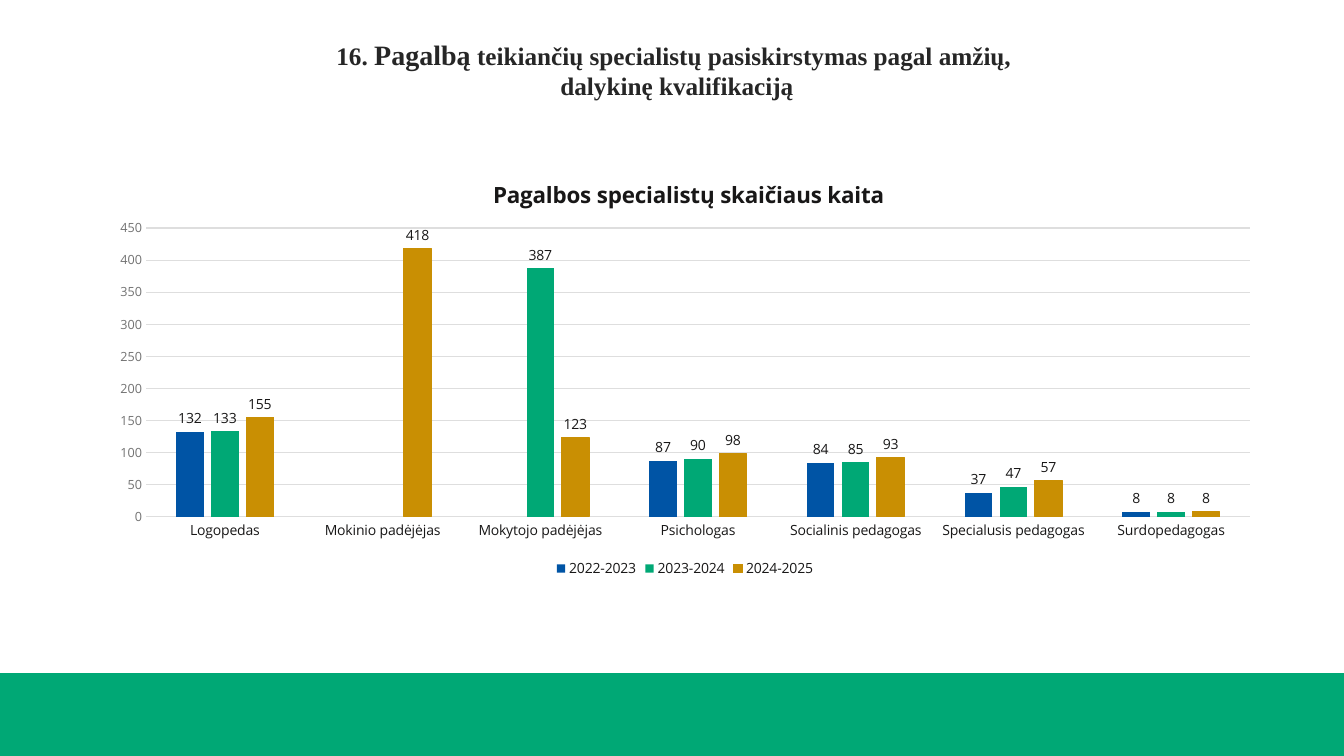
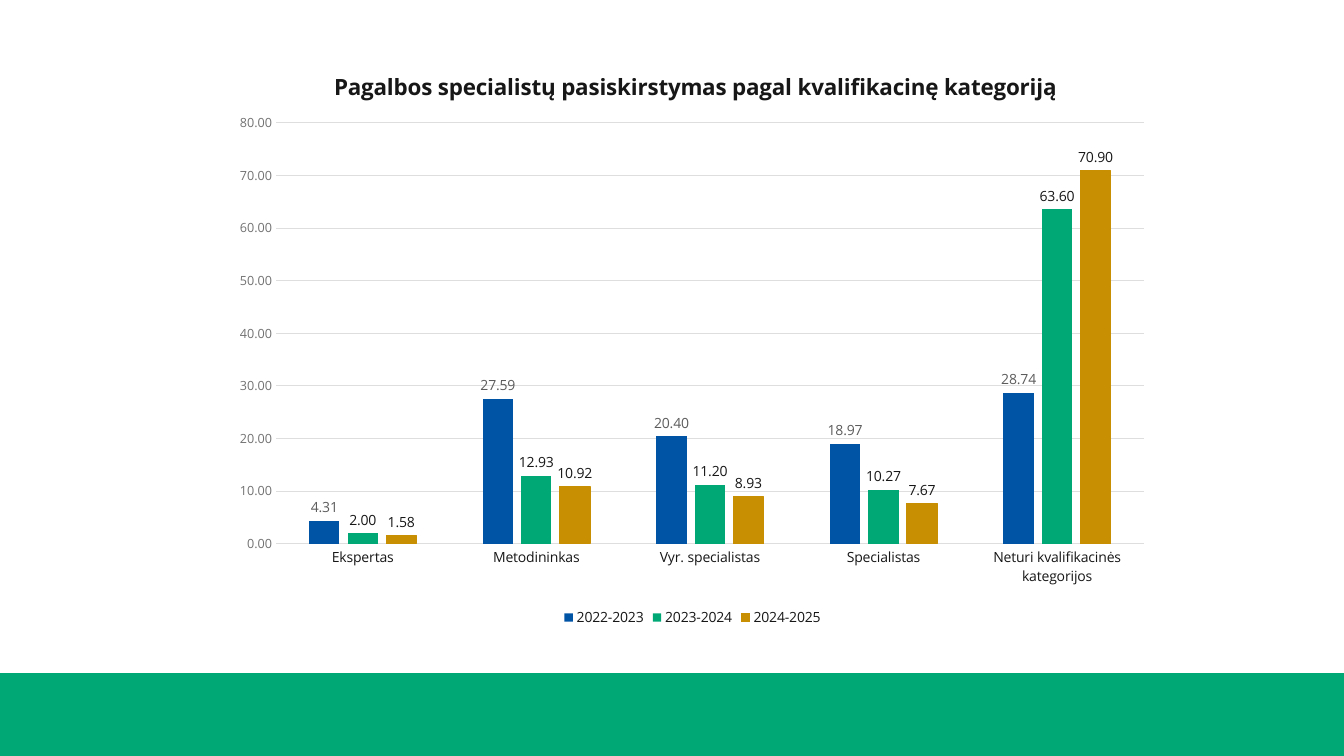
from lxml import etree
from pptx import Presentation
from pptx import util as u
from pptx.chart.data import CategoryChartData
from pptx.dml.color import RGBColor
from pptx.enum import chart as charts, shapes, text
from pptx.oxml.ns import qn

SCALE = 914400 / 100.8
SLIDE_WIDTH, SLIDE_HEIGHT = 1344, 756
BAND_HEIGHT = 83

BLUE = RGBColor(0x00, 0x54, 0xA5)
GREEN = RGBColor(0x00, 0xA8, 0x75)
OCHRE = RGBColor(0xC9, 0x8F, 0x03)
INK = RGBColor(0x18, 0x17, 0x17)
TITLE_INK = RGBColor(0x26, 0x26, 0x26)
AXIS_GREY = RGBColor(0x72, 0x72, 0x72)
LABEL_GREY = RGBColor(0x5C, 0x5C, 0x5C)
GRID_GREY = RGBColor(0xDE, 0xDE, 0xDE)

CHART_FONT = "Open Sans"
TITLE_FONT = "Times New Roman"
YEARS = ("2022-2023", "2023-2024", "2024-2025")
YEAR_COLORS = (BLUE, GREEN, OCHRE)


def px(length):
    """Turn pixels into EMU."""
    return u.Emu(round(length * SCALE))


def place(box):
    """Turn a pixel box into EMU."""
    return [px(length) for length in box]


def style_font(font, size, color, name=CHART_FONT, bold=False):
    """Set the look of a font."""
    font.name, font.size, font.bold = name, u.Pt(size), bold
    font.color.rgb = color


def style_line(line, color):
    """Give a line the hairline width and a colour."""
    line.width = u.Pt(0.75)
    line.color.rgb = color


def set_layout(parent, index, values, inner=False):
    """Fix the place of a chart part as fractions of the chart."""
    for old in parent.findall(qn("c:layout")):
        parent.remove(old)
    layout = etree.Element(qn("c:layout"))
    manual = etree.SubElement(layout, qn("c:manualLayout"))
    if inner:
        etree.SubElement(manual, qn("c:layoutTarget")).set("val", "inner")
    for mode in ("xMode", "yMode"):
        etree.SubElement(manual, qn(f"c:{mode}")).set("val", "edge")
    for key, value in zip("xywh", values):
        etree.SubElement(manual, qn(f"c:{key}")).set("val", f"{value:.4f}")
    parent.insert(index, layout)


def add_band(slide):
    """Draw the green band along the bottom edge."""
    box = (0, SLIDE_HEIGHT - BAND_HEIGHT, SLIDE_WIDTH, BAND_HEIGHT)
    band = slide.shapes.add_shape(shapes.MSO_SHAPE.RECTANGLE, *place(box))
    band.shadow.inherit = False
    band.fill.solid()
    band.fill.fore_color.rgb = GREEN
    band.line.fill.background()


def add_title(slide, box, lines):
    """Place the slide title, given as lines of (text, size) runs."""
    title = slide.shapes.title
    title.left, title.top, title.width, title.height = place(box)
    frame = title.text_frame
    frame.word_wrap = False
    frame.auto_size = text.MSO_AUTO_SIZE.NONE
    frame.vertical_anchor = text.MSO_ANCHOR.TOP
    for number, runs in enumerate(lines):
        paragraph = frame.add_paragraph() if number else frame.paragraphs[0]
        paragraph.alignment = text.PP_ALIGN.CENTER
        for words, size in runs:
            run = paragraph.add_run()
            run.text = words
            style_font(run.font, size, TITLE_INK, TITLE_FONT, True)


def style_chart_title(chart, words):
    """Write the bold chart title."""
    chart.has_title = True
    run = chart.chart_title.text_frame.paragraphs[0].add_run()
    run.text = words
    style_font(run.font, 16, INK, bold=True)


def style_axes(chart, top, step, number_format):
    """Style both axes, the grid and the scale."""
    categories, values = chart.category_axis, chart.value_axis
    for axis, size, color in ((categories, 10, INK), (values, 9, AXIS_GREY)):
        axis.major_tick_mark = axis.minor_tick_mark = charts.XL_TICK_MARK.NONE
        style_font(axis.tick_labels.font, size, color)
    style_line(categories.format.line, GRID_GREY)
    values.format.line.fill.background()
    values.has_major_gridlines = True
    style_line(values.major_gridlines.format.line, GRID_GREY)
    values.minimum_scale, values.maximum_scale, values.major_unit = 0, top, step
    values.tick_labels.number_format = number_format
    values.tick_labels.number_format_is_linked = False


def style_series(plot, label_colors, number_format):
    """Colour the columns and label them with their values."""
    plot.gap_width, plot.overlap = 219, -27
    plot.vary_by_categories = False
    for series, color, label_color in zip(plot.series, YEAR_COLORS, label_colors):
        series.invert_if_negative = False
        series.format.fill.solid()
        series.format.fill.fore_color.rgb = color
        if color == OCHRE:
            style_line(series.format.line, color)
        labels = series.data_labels
        labels.show_value = True
        labels.position = charts.XL_LABEL_POSITION.OUTSIDE_END
        labels.number_format = number_format
        labels.number_format_is_linked = False
        style_font(labels.font, 10, label_color)


def add_column_chart(slide, box, plot_box, title_at, title, categories, rows,
                     top, step, number_format, label_colors):
    """Add a column chart; plot_box and title_at are relative to box."""
    data = CategoryChartData(number_format=number_format)
    data.categories = categories
    for year, row in zip(YEARS, rows):
        data.add_series(year, row)
    chart = slide.shapes.add_chart(
        charts.XL_CHART_TYPE.COLUMN_CLUSTERED, *place(box), data).chart
    style_font(chart.font, 10, TITLE_INK)
    style_chart_title(chart, title)
    style_axes(chart, top, step, number_format)
    style_series(chart.plots[0], label_colors, number_format)
    chart.has_legend = True
    chart.legend.position = charts.XL_LEGEND_POSITION.BOTTOM
    chart.legend.include_in_layout = False
    style_font(chart.legend.font, 10, INK)
    width, height = box[2:]
    sides = (width, height, width, height)
    set_layout(chart.chart_title._element, 1,
               [part / side for part, side in zip(title_at, sides)])
    plot_area = chart._chartSpace.find(".//" + qn("c:plotArea"))
    set_layout(plot_area, 0,
               [part / side for part, side in zip(plot_box, sides)], inner=True)


def build_staff_slide(presentation):
    """Build the slide with the number of specialists."""
    slide = presentation.slides.add_slide(presentation.slide_layouts[5])
    add_band(slide)
    add_column_chart(
        slide, (97, 154, 1176, 428), (49, 74, 1104, 289), (392, 20),
        "Pagalbos specialistų skaičiaus kaita",
        ("Logopedas", "Mokinio padėjėjas", "Mokytojo padėjėjas", "Psichologas",
         "Socialinis pedagogas", "Specialusis pedagogas", "Surdopedagogas"),
        ((132, None, None, 87, 84, 37, 8),
         (133, None, 387, 90, 85, 47, 8),
         (155, 418, 123, 98, 93, 57, 8)),
        450, 50, "#,##0", (INK, INK, INK))
    add_title(slide, (323, 32, 708, 75), (
        (("16. ", 18), ("Pagalbą", 20),
         (" teikiančių specialistų pasiskirstymas pagal amžių, ", 18)),
        (("dalykinę kvalifikaciją", 18),)))


def build_category_slide(presentation):
    """Build the slide with the qualification categories."""
    slide = presentation.slides.add_slide(presentation.slide_layouts[6])
    add_band(slide)
    add_column_chart(
        slide, (222, 45, 941, 586), (54, 78, 868, 421), (108, 21),
        "Pagalbos specialistų pasiskirstymas pagal kvalifikacinę kategoriją",
        ("Ekspertas", "Metodininkas", "Vyr. specialistas", "Specialistas",
         "Neturi kvalifikacinės kategorijos"),
        ((4.31, 27.59, 20.4, 18.97, 28.74),
         (2, 12.93, 11.2, 10.27, 63.6),
         (1.58, 10.92, 8.93, 7.67, 70.9)),
        80, 10, "0.00", (LABEL_GREY, INK, INK))


def main():
    """Build and save the presentation."""
    presentation = Presentation()
    presentation.slide_width = px(SLIDE_WIDTH)
    presentation.slide_height = px(SLIDE_HEIGHT)
    build_staff_slide(presentation)
    build_category_slide(presentation)
    presentation.save("out.pptx")


if __name__ == "__main__":
    main()
